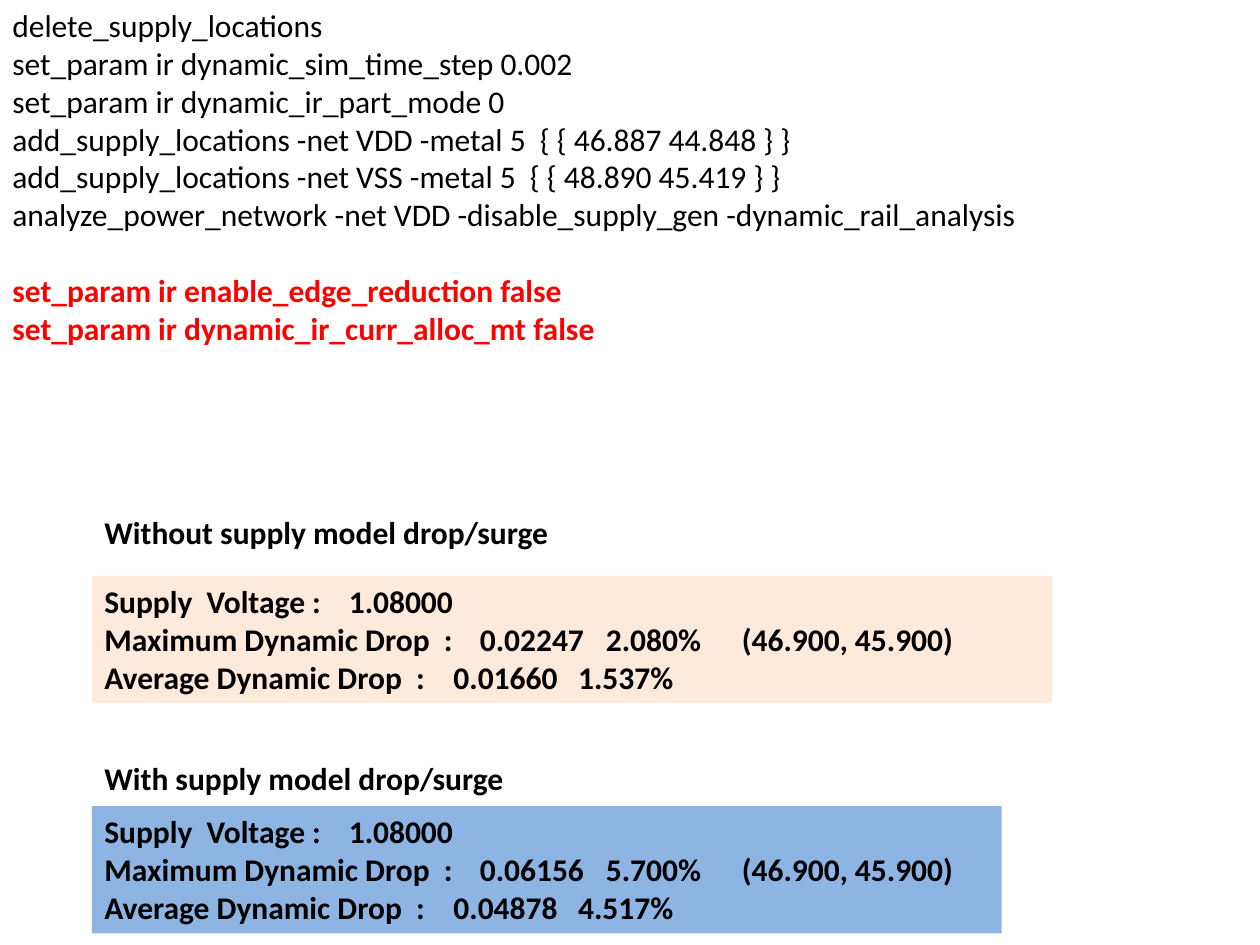
import dataclasses

import pptx
import pptx.dml.color
import pptx.enum.shapes
import pptx.enum.text
import pptx.oxml.ns
import pptx.util
from lxml import etree


@dataclasses.dataclass(frozen=True)
class Theme:
    font: str = "Calibri"
    size: int = 18
    line: int = 22
    ink: str = "000000"
    alert: str = "FF0000"
    peach: str = "FDEADA"
    blue: str = "8EB4E3"


THEME = Theme()
WIDTH, HEIGHT = 10, 7.5
CAPTION_HEIGHT, PANEL_HEIGHT = 0.4, 1.01

COMMANDS = [
    "delete_supply_locations",
    "set_param ir dynamic_sim_time_step 0.002",
    "set_param ir dynamic_ir_part_mode 0",
    "add_supply_locations -net VDD -metal 5  { { 46.887 44.848 } }",
    "add_supply_locations -net VSS -metal 5  { { 48.890 45.419 } }",
    "analyze_power_network -net VDD -disable_supply_gen -dynamic_rail_analysis",
]
DEBUG_COMMANDS = [
    "set_param ir enable_edge_reduction false",
    "set_param ir dynamic_ir_curr_alloc_mt false",
]
# Tab stops in inches for the voltage, maximum and average rows
RESULT_TABS = [(1.94,), (2.98, 3.98, 5.06), (2.77, 3.76)]


def color(value):
    return pptx.dml.color.RGBColor.from_string(value)


def inches(*lengths):
    return [pptx.util.Inches(length) for length in lengths]


def add_line(frame, text, ink=THEME.ink, bold=False, before=0, tabs=()):
    """Write one paragraph, reusing the empty first one of a new frame."""
    first = frame.paragraphs[0]
    para = frame.add_paragraph() if first.runs else first
    para.alignment = pptx.enum.text.PP_ALIGN.LEFT
    para.space_before = pptx.util.Pt(before)
    if tabs:
        name = pptx.oxml.ns.qn
        stops = etree.SubElement(para._p.get_or_add_pPr(), name("a:tabLst"))
        for stop in tabs:
            etree.SubElement(stops, name("a:tab"),
                             pos=str(pptx.util.Inches(stop)), algn="l")
    span = para.add_run()
    span.text = text
    span.font.name = THEME.font
    span.font.size = pptx.util.Pt(THEME.size)
    span.font.bold = bold
    span.font.color.rgb = color(ink)


def add_text_box(page, left, top, width, height, wrap=True):
    box = page.shapes.add_textbox(*inches(left, top, width, height))
    box.text_frame.word_wrap = wrap
    return box.text_frame


def add_commands(page, left, top, width, height):
    """Command listing, with the debug settings set apart below."""
    frame = add_text_box(page, left, top, width, height)
    for command in COMMANDS:
        add_line(frame, command)
    for index, command in enumerate(DEBUG_COMMANDS):
        add_line(frame, command, ink=THEME.alert, bold=True,
                 before=0 if index else THEME.line)


def add_result(page, left, top, width, height, caption, fill, maximum, average):
    """Caption at the top of the region, filled panel at its foot."""
    frame = add_text_box(page, left, top, width, CAPTION_HEIGHT, wrap=False)
    add_line(frame, caption, bold=True)

    panel = page.shapes.add_shape(
        pptx.enum.shapes.MSO_SHAPE.RECTANGLE,
        *inches(left, top + height - PANEL_HEIGHT, width, PANEL_HEIGHT))
    panel.shadow.inherit = False
    panel.fill.solid()
    panel.fill.fore_color.rgb = color(fill)
    panel.line.fill.background()
    panel.text_frame.word_wrap = True
    panel.text_frame.vertical_anchor = pptx.enum.text.MSO_ANCHOR.TOP
    rows = [
        "Supply  Voltage :\t1.08000",
        f"Maximum Dynamic Drop  :\t{maximum}\t(46.900, 45.900)",
        f"Average Dynamic Drop  :\t{average}",
    ]
    for row, tabs in zip(rows, RESULT_TABS):
        add_line(panel.text_frame, row, bold=True, tabs=tabs)


def main():
    deck = pptx.Presentation()
    deck.slide_width, deck.slide_height = inches(WIDTH, HEIGHT)
    page = deck.slides.add_slide(deck.slide_layouts[6])

    # Commands across the top
    add_commands(page, 0, 0, WIDTH, 2.83)

    # Results without and with the supply model
    left = 0.073 * WIDTH
    add_result(page, left, 0.536 * HEIGHT, 0.762 * WIDTH, 1.56,
               "Without supply model drop/surge", THEME.peach,
               "0.02247\t2.080%", "0.01660\t1.537%")
    add_result(page, left, 0.797 * HEIGHT, 0.722 * WIDTH, 1.43,
               "With supply model drop/surge", THEME.blue,
               "0.06156\t5.700%", "0.04878\t4.517%")

    deck.save("out.pptx")


if __name__ == "__main__":
    main()
